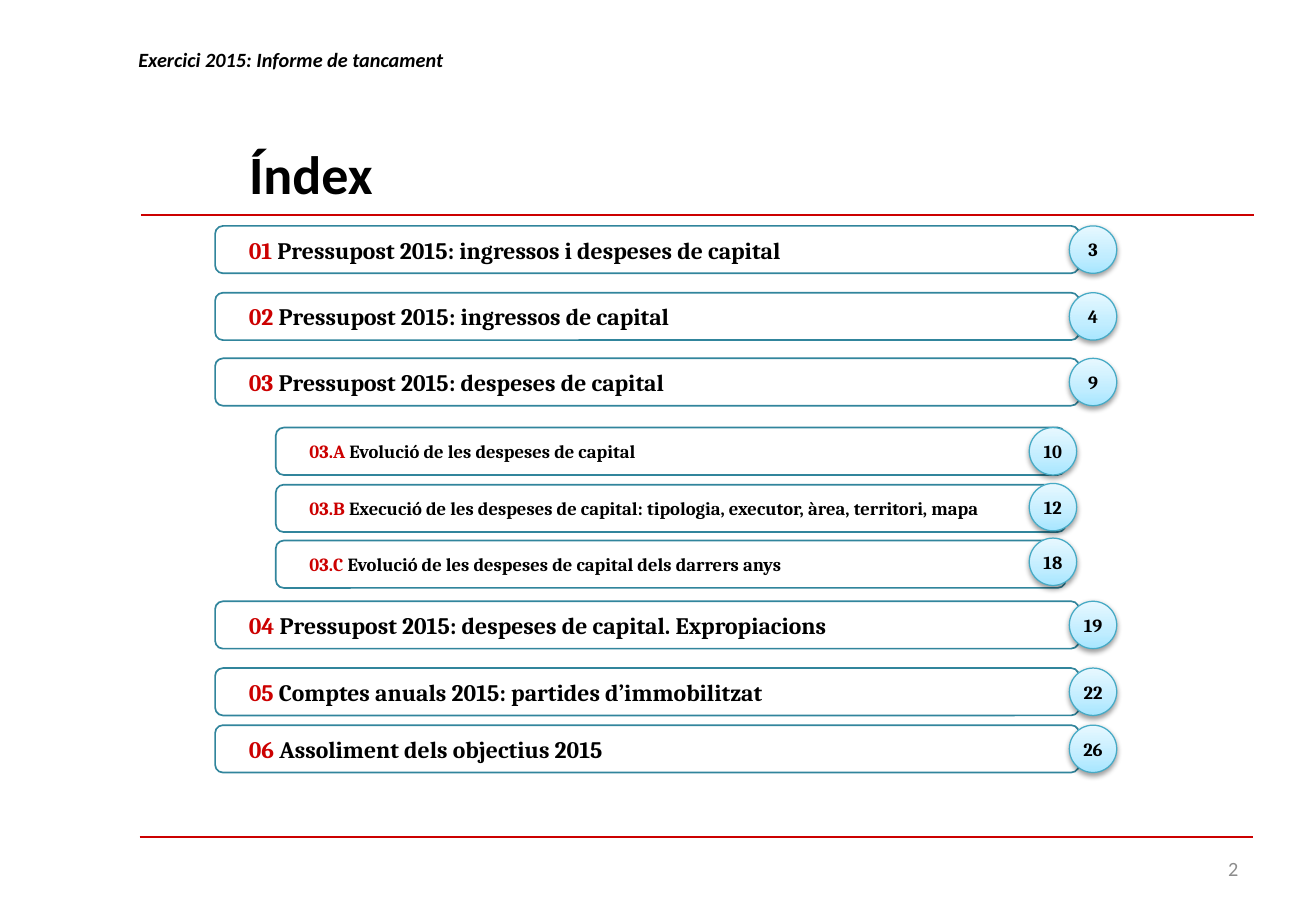
"""Build the index slide of the 2015 closing report."""
from copy import deepcopy
from dataclasses import dataclass

from pptx import Presentation
from pptx.dml.color import RGBColor
from pptx.enum import shapes, text
from pptx.oxml import parse_xml
from pptx.oxml.ns import nsdecls, qn
from pptx.util import Inches, Pt

RED = RGBColor(0xCC, 0x00, 0x00)
BLACK = RGBColor(0x00, 0x00, 0x00)
GREY = RGBColor(0x8C, 0x8C, 0x8C)
TEAL = RGBColor(0x31, 0x85, 0x9C)
BADGE_LINE = RGBColor(0x46, 0xAA, 0xC5)
BADGE_STOPS = [
    (0, RGBColor(0xA7, 0xE6, 0xFF)),
    (0.35, RGBColor(0xC1, 0xED, 0xFF)),
    (1, RGBColor(0xE7, 0xF8, 0xFF)),
]
BODY_FONT, INDEX_FONT = "Calibri", "Cambria"
HEIGHT = 0.39
SHADOW = (
    f'<a:effectLst {nsdecls("a")}>'
    '<a:outerShdw blurRad="40000" dist="20000" dir="5400000" rotWithShape="0">'
    '<a:srgbClr val="000000"><a:alpha val="38000"/></a:srgbClr>'
    '</a:outerShdw></a:effectLst>'
)


@dataclass(frozen=True)
class Level:
    left: float
    width: float
    badge_left: float
    size: int


@dataclass(frozen=True)
class Entry:
    level: Level
    top: float
    number: str
    title: str
    page: int
    badge_shift: float = 0


CHAPTER = Level(1.77, 7.11, 8.8, 14)
SECTION = Level(2.27, 6.5, 8.47, 11)
ENTRIES = [
    Entry(CHAPTER, 1.86, "01", "Pressupost 2015: ingressos i despeses de capital", 3),
    Entry(CHAPTER, 2.41, "02", "Pressupost 2015: ingressos de capital", 4),
    Entry(CHAPTER, 2.95, "03", "Pressupost 2015: despeses de capital", 9),
    Entry(CHAPTER, 4.95, "04", "Pressupost 2015: despeses de capital. Expropiacions", 19),
    Entry(CHAPTER, 5.5, "05", "Comptes anuals 2015: partides d’immobilitzat", 22),
    Entry(CHAPTER, 5.97, "06", "Assoliment dels objectius 2015", 26),
    Entry(SECTION, 3.52, "03.A", "Evolució de les despeses de capital", 10),
    Entry(SECTION, 3.99, "03.B", "Execució de les despeses de capital: tipologia, "
          "executor, àrea, territori, mapa", 12, -0.01),
    Entry(SECTION, 4.45, "03.C", "Evolució de les despeses de capital dels darrers anys",
          18, -0.02),
]


def add_run(p, content: str, *, size: int, font: str = BODY_FONT, color: RGBColor = BLACK,
            bold: bool = True, italic: bool = False) -> None:
    r = p.add_run()
    r.text = content
    r.font.size, r.font.name = Pt(size), font
    r.font.bold, r.font.italic = bold, italic
    r.font.color.rgb = color


def add_rule(s, left: float, top: float) -> None:
    line = s.shapes.add_connector(shapes.MSO_CONNECTOR.STRAIGHT, Inches(left), Inches(top),
                                  Inches(left + 9.16), Inches(top))
    line.line.color.rgb, line.line.width = RED, Pt(1)
    line._element.spPr.append(parse_xml(f'<a:effectLst {nsdecls("a")}/>'))


def add_box(s, left: float, top: float, width: float, height: float):
    sp = s.shapes.add_textbox(Inches(left), Inches(top), Inches(width), Inches(height))
    sp.text_frame.word_wrap = True
    return sp.text_frame


def add_outline(s, kind, left: float, top: float, width: float, color: RGBColor,
                weight: float, inset: float):
    sp = s.shapes.add_shape(kind, Inches(left), Inches(top), Inches(width), Inches(HEIGHT))
    sp.shadow.inherit = False
    sp.line.color.rgb, sp.line.width = color, Pt(weight)
    tf = sp.text_frame
    tf.word_wrap = True
    tf.vertical_anchor = text.MSO_ANCHOR.MIDDLE
    tf.margin_left = tf.margin_right = Inches(inset)
    return sp


def add_bar(s, entry: Entry) -> None:
    level = entry.level
    sp = add_outline(s, shapes.MSO_SHAPE.ROUNDED_RECTANGLE, level.left, entry.top,
                     level.width, TEAL, 1, 0.1)
    sp.fill.background()
    p = sp.text_frame.paragraphs[0]
    p.alignment = text.PP_ALIGN.LEFT
    p._p.get_or_add_pPr().set("marL", str(Inches(0.16)))
    add_run(p, f"{entry.number} ", size=level.size, font=INDEX_FONT, color=RED)
    add_run(p, entry.title, size=level.size, font=INDEX_FONT)


def add_badge(s, entry: Entry) -> None:
    sp = add_outline(s, shapes.MSO_SHAPE.OVAL, entry.level.badge_left,
                     entry.top + entry.badge_shift, HEIGHT, BADGE_LINE, 0.75, 0.04)
    sp.fill.gradient()
    sp.fill.gradient_angle = 90
    spPr = sp._element.spPr
    stop_list = spPr.find(qn("a:gradFill")).find(qn("a:gsLst"))
    stop_list.append(deepcopy(stop_list[0]))
    for stop, (position, color) in zip(sp.fill.gradient_stops, BADGE_STOPS):
        stop.position, stop.color.rgb = position, color
    spPr.replace(spPr.find(qn("a:effectLst")), parse_xml(SHADOW))
    p = sp.text_frame.paragraphs[0]
    p.alignment = text.PP_ALIGN.CENTER
    add_run(p, str(entry.page), size=11, font=INDEX_FONT)


def add_title(s, content: str) -> None:
    sp = s.shapes.title
    sp.left, sp.top, sp.width, sp.height = map(Inches, (1.95, 1.07, 9.14, 0.7))
    sp.text_frame.vertical_anchor = text.MSO_ANCHOR.MIDDLE
    p = sp.text_frame.paragraphs[0]
    p.alignment = text.PP_ALIGN.LEFT
    add_run(p, content, size=32)


def main() -> None:
    prs = Presentation()
    prs.slide_width, prs.slide_height = Inches(10.83), Inches(7.5)
    s = prs.slides.add_slide(prs.slide_layouts[5])

    add_rule(s, 1.16, 1.77)
    add_rule(s, 1.15, 6.89)
    header = add_box(s, 1.04, 0.34, 4.06, 0.3)
    header.auto_size = text.MSO_AUTO_SIZE.SHAPE_TO_FIT_TEXT
    add_run(header.paragraphs[0], "Exercici 2015: Informe de tancament", size=12, italic=True)
    add_title(s, "Índex")

    page_number = add_box(s, 7.76, 6.95, 2.53, 0.4)
    page_number.vertical_anchor = text.MSO_ANCHOR.MIDDLE
    page_number.paragraphs[0].alignment = text.PP_ALIGN.RIGHT
    add_run(page_number.paragraphs[0], "2", size=12, color=GREY, bold=False)

    for entry in ENTRIES:
        add_bar(s, entry)
        add_badge(s, entry)
    prs.save("out.pptx")


if __name__ == "__main__":
    main()
